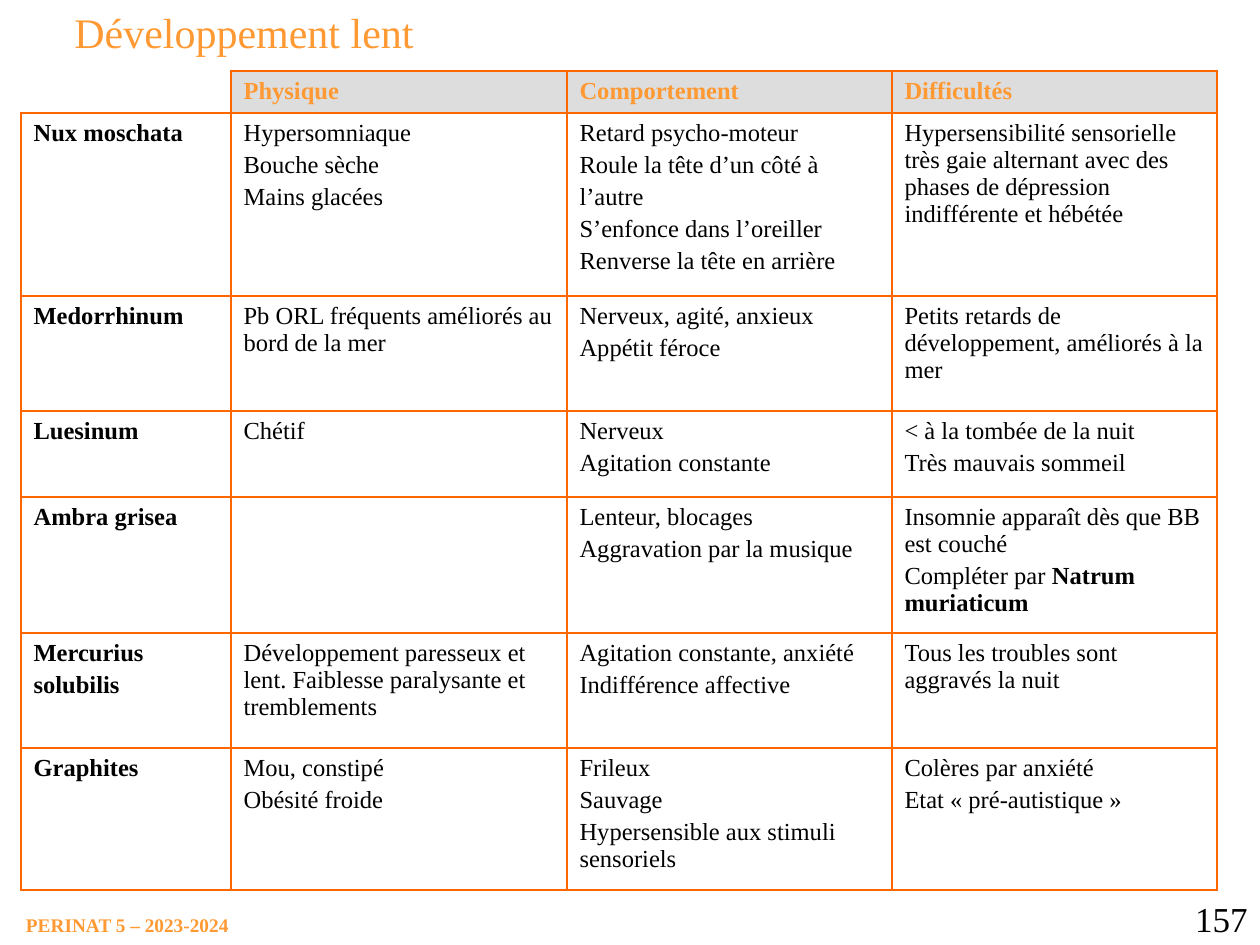
from lxml.etree import SubElement
from pptx import Presentation
from pptx.dml.color import RGBColor
from pptx.enum.text import MSO_AUTO_SIZE, PP_ALIGN
from pptx.oxml.ns import qn
from pptx.util import Emu, Pt

PX_PER_INCH = 126
FONT = "Times New Roman"
COLORS = {"accent": "FF9933", "border": "FF6600", "header": "DDDDDD",
          "body": "FFFFFF", "text": "000000"}

COLUMN_WIDTHS = [210, 336, 325, 325]
ROW_HEIGHTS = [42, 183, 115, 86, 136, 115, 142]

# One string per cell: a line break starts a paragraph, ** marks bold words
REMEDIES = [
    ["", "Physique", "Comportement", "Difficultés"],
    ["Nux moschata",
     "Hypersomniaque\nBouche sèche\nMains glacées",
     "Retard psycho-moteur\nRoule la tête d’un côté à\nl’autre\n"
     "S’enfonce dans l’oreiller\nRenverse la tête en arrière",
     "Hypersensibilité sensorielle très gaie alternant avec des phases "
     "de dépression indifférente et hébétée"],
    ["Medorrhinum",
     "Pb ORL fréquents améliorés au bord de la mer",
     "Nerveux, agité, anxieux\nAppétit féroce",
     "Petits retards de développement, améliorés à la mer"],
    ["Luesinum",
     "Chétif",
     "Nerveux\nAgitation constante",
     "< à la tombée de la nuit\nTrès mauvais sommeil"],
    ["Ambra grisea",
     "",
     "Lenteur, blocages\nAggravation par la musique",
     "Insomnie apparaît dès que BB est couché\n"
     "Compléter par **Natrum muriaticum**"],
    ["Mercurius\nsolubilis",
     "Développement paresseux et lent. Faiblesse paralysante et tremblements",
     "Agitation constante, anxiété\nIndifférence affective",
     "Tous les troubles sont aggravés la nuit"],
    ["Graphites",
     "Mou, constipé\nObésité froide",
     "Frileux\nSauvage\nHypersensible aux stimuli sensoriels",
     "Colères par anxiété\nEtat « pré-autistique »"],
]


def px(length):
    return Emu(round(length * 914400 / PX_PER_INCH))


def color(name):
    return RGBColor.from_string(COLORS[name])


def style_paragraph(paragraph, size, color_name, bold=False):
    font = paragraph.font
    font.name, font.size, font.bold = FONT, Pt(size), bold
    font.color.rgb = color(color_name)


def add_label(slide, box, text, size, color_name, bold=False):
    label = slide.shapes.add_textbox(*map(px, box))
    frame = label.text_frame
    frame.word_wrap = True
    frame.text = text
    style_paragraph(frame.paragraphs[0], size, color_name, bold)
    return frame


def set_borders(cell, visible_sides):
    properties = cell._tc.get_or_add_tcPr()
    for position, side in enumerate("LRTB"):
        line = properties.makeelement(qn(f"a:ln{side}"), {"w": str(Pt(1))})
        if side in visible_sides:
            fill = SubElement(line, qn("a:solidFill"))
            SubElement(fill, qn("a:srgbClr"), val=COLORS["border"])
        else:
            SubElement(line, qn("a:noFill"))
        properties.insert(position, line)


def fill_cell(cell, text, color_name, bold):
    frame = cell.text_frame
    for index, content in enumerate(text.split("\n")):
        paragraph = frame.add_paragraph() if index else frame.paragraphs[0]
        style_paragraph(paragraph, 14, color_name, bold)
        paragraph.space_before = Pt(2.8)
        for part, words in enumerate(content.split("**")):
            if words:
                run = paragraph.add_run()
                run.text = words
                if part % 2:
                    run.font.bold = True


def add_remedy_table(slide):
    frame = slide.shapes.add_table(
        len(ROW_HEIGHTS), len(COLUMN_WIDTHS), px(21), px(71),
        px(sum(COLUMN_WIDTHS)), px(sum(ROW_HEIGHTS)))
    table = frame.table
    table.first_row = table.horz_banding = False
    for column, width in zip(table.columns, COLUMN_WIDTHS):
        column.width = px(width)
    for row, height in zip(table.rows, ROW_HEIGHTS):
        row.height = px(height)

    for r, remedy in enumerate(REMEDIES):
        for c, text in enumerate(remedy):
            cell = table.cell(r, c)
            is_header = r == 0 and c > 0
            is_corner = r == 0 and c == 0
            fill_cell(cell, text, "accent" if is_header else "text",
                      bold=r == 0 or c == 0)
            cell.fill.solid()
            cell.fill.fore_color.rgb = color("header" if is_header else "body")
            set_borders(cell, "RB" if is_corner else "LRTB")


def main():
    presentation = Presentation()
    presentation.slide_width, presentation.slide_height = px(1260), px(945)
    slide = presentation.slides.add_slide(presentation.slide_layouts[6])

    # Footer and page number
    footer = add_label(slide, (26, 913, 207, 24), "PERINAT 5 – 2023-2024",
                       11, "accent", bold=True)
    footer.margin_left = footer.margin_right = 0
    footer.margin_top = footer.margin_bottom = 0
    footer.word_wrap = False
    page_number = add_label(slide, (1155, 891, 105, 54), "157", 20, "text")
    page_number.paragraphs[0].alignment = PP_ALIGN.RIGHT
    for frame in (footer, page_number):
        frame.auto_size = MSO_AUTO_SIZE.SHAPE_TO_FIT_TEXT

    # Remedies and title
    add_remedy_table(slide)
    add_label(slide, (62, 0, 391, 71), "Développement lent", 24, "accent")

    presentation.save("out.pptx")


if __name__ == "__main__":
    main()
